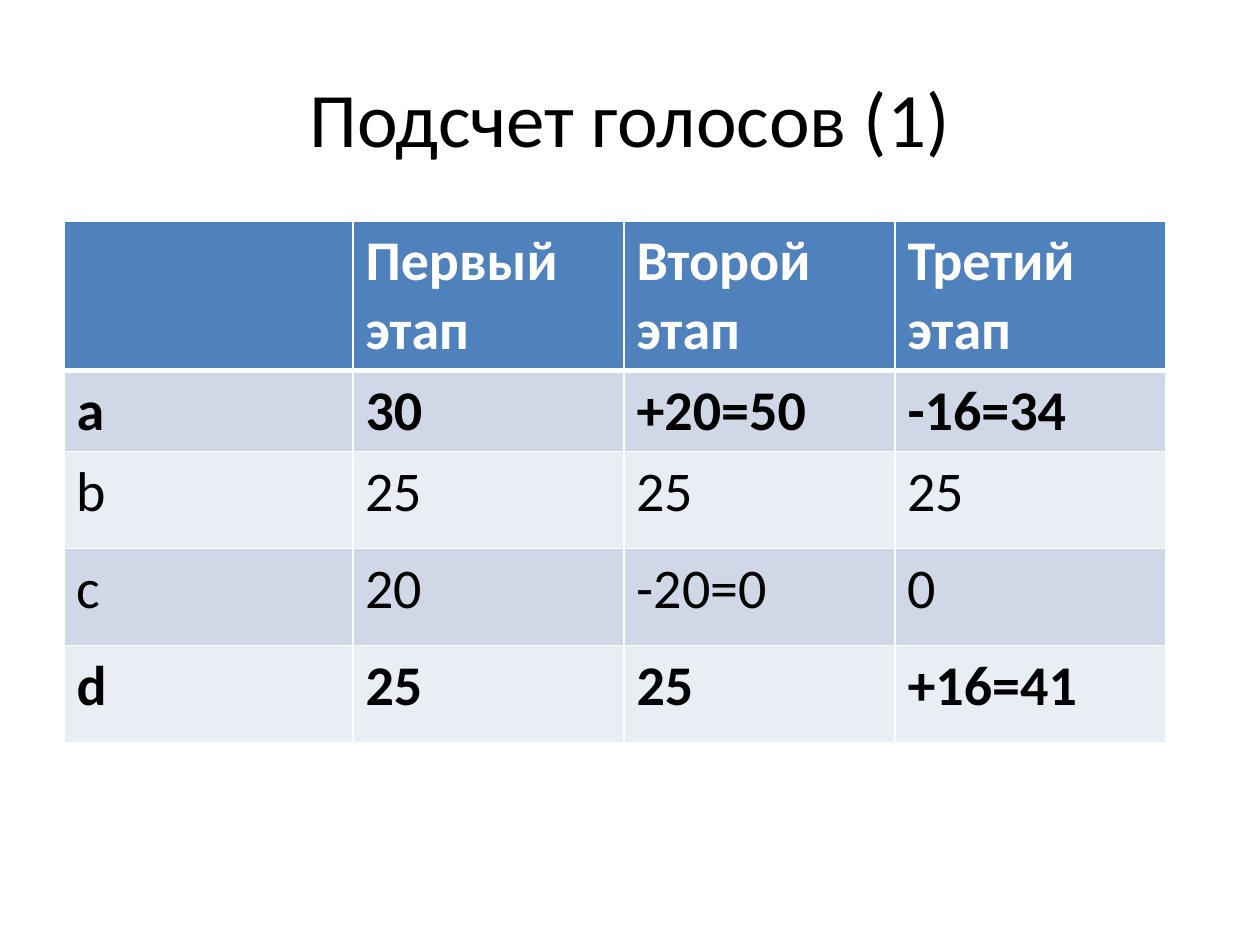
import pptx
import pptx.dml.color
import pptx.enum.text
import pptx.oxml
import pptx.oxml.ns
import pptx.util

# Content
TITLE = "Подсчет голосов (1)"
HEADER = ["", "Первый этап", "Второй этап", "Третий этап"]
VOTES = [
    ["a", "30", "+20=50", "-16=34"],
    ["b", "25", "25", "25"],
    ["c", "20", "-20=0", "0"],
    ["d", "25", "25", "+16=41"],
]
FINALISTS = {"a", "d"}

# Layout in px and colours
COLUMN_WIDTHS = [289, 271, 271, 271]
ROW_HEIGHTS = [149, 81, 97, 97, 97]
HEADER_FILL = "4F81BD"
BAND_FILLS = ["D0D8E8", "E9EDF4"]
WHITE, BLACK = "FFFFFF", "000000"


def px(length):
    return pptx.util.Emu(round(length * 914400 / 126))


def color(value):
    return pptx.dml.color.RGBColor.from_string(value)


def write(frame, text, size, ink=BLACK, bold=False, align=None):
    para = frame.paragraphs[0]
    para.alignment = align
    para.font.size = pptx.util.Pt(size)
    if not text:
        return
    span = para.add_run()
    span.text = text
    span.font.name = "Calibri"
    span.font.size = pptx.util.Pt(size)
    span.font.bold = bold
    span.font.color.rgb = color(ink)


def add_borders(cell, bottom, top):
    properties = cell._tc.get_or_add_tcPr()
    for side, points in (("L", 1), ("R", 1), ("T", top), ("B", bottom)):
        properties.append(pptx.oxml.parse_xml(
            f'<a:ln{side} {pptx.oxml.ns.nsdecls("a")} w="{pptx.util.Pt(points)}">'
            f'<a:solidFill><a:srgbClr val="{WHITE}"/></a:solidFill></a:ln{side}>'))


deck = pptx.Presentation()
deck.slide_width, deck.slide_height = px(1260), px(945)
page = deck.slides.add_slide(deck.slide_layouts[5])

# Title
title = page.shapes.title
title.left, title.top, title.width, title.height = px(63), px(38), px(1134), px(157)
title.text_frame.vertical_anchor = pptx.enum.text.MSO_ANCHOR.MIDDLE
write(title.text_frame, TITLE, 44, align=pptx.enum.text.PP_ALIGN.CENTER)

# Vote table
rows = [HEADER] + VOTES
table = page.shapes.add_table(
    len(rows), len(HEADER), px(64), px(221),
    px(sum(COLUMN_WIDTHS)), px(sum(ROW_HEIGHTS))).table
for column, width in zip(table.columns, COLUMN_WIDTHS):
    column.width = px(width)
for row, height in zip(table.rows, ROW_HEIGHTS):
    row.height = px(height)

for r, values in enumerate(rows):
    is_header = r == 0
    fill = HEADER_FILL if is_header else BAND_FILLS[(r - 1) % 2]
    for c, text in enumerate(values):
        cell = table.cell(r, c)
        add_borders(cell, bottom=3 if is_header else 1, top=3 if r == 1 else 1)
        cell.fill.solid()
        cell.fill.fore_color.rgb = color(fill)
        write(cell.text_frame, text, 32, ink=WHITE if is_header else BLACK,
              bold=is_header or values[0] in FINALISTS)

deck.save("out.pptx")
